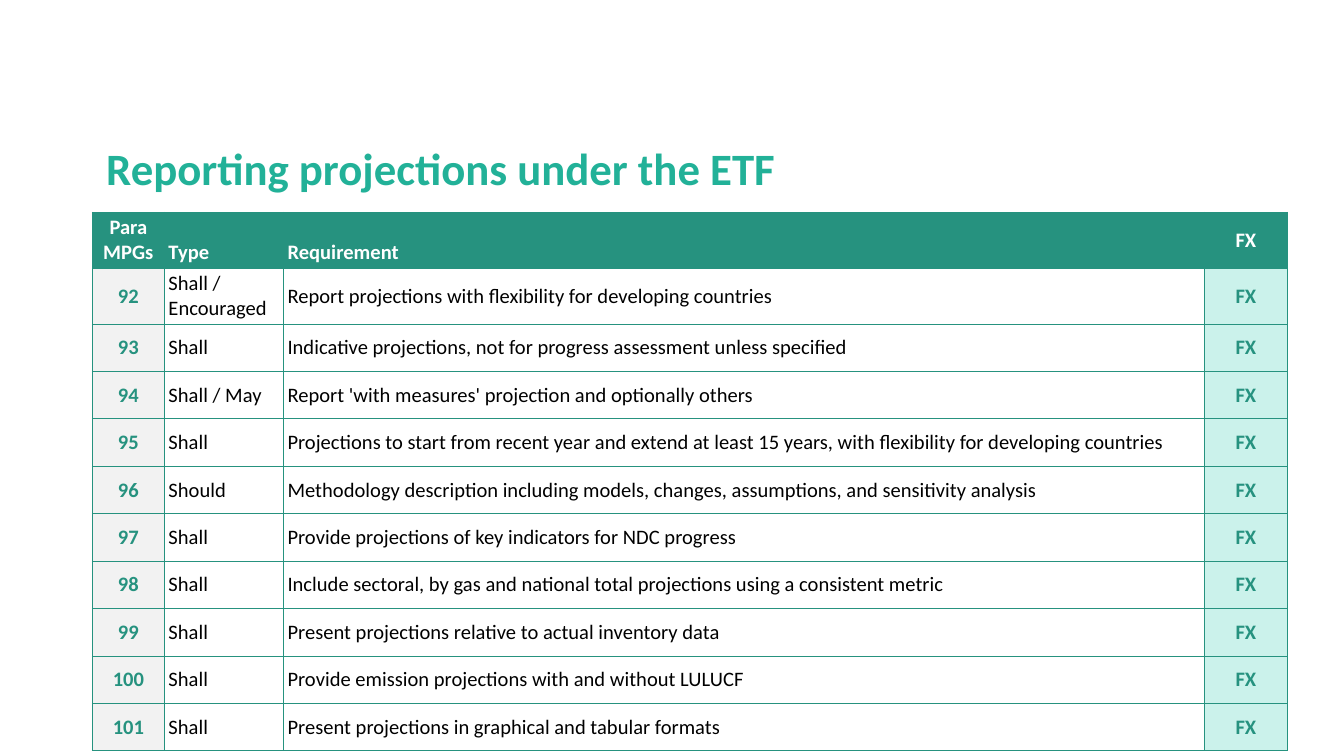
from lxml.etree import SubElement
from pptx import Presentation
from pptx.dml.color import RGBColor
from pptx.enum.text import MSO_ANCHOR, PP_ALIGN
from pptx.oxml.ns import qn
from pptx.util import Pt

TITLE_GREEN = "22B198"
GREEN = "26927F"
MINT = "CBF2EB"
GREY = "F2F2F2"
WHITE = "FFFFFF"
BLACK = "000000"

HEADINGS = ["Para MPGs", "Type", "Requirement", "FX"]
REQUIREMENTS = [
    ("Shall / Encouraged", "Report projections with flexibility for developing countries"),
    ("Shall", "Indicative projections, not for progress assessment unless specified"),
    ("Shall / May", "Report 'with measures' projection and optionally others"),
    ("Shall", "Projections to start from recent year and extend at least 15 years, "
              "with flexibility for developing countries"),
    ("Should", "Methodology description including models, changes, assumptions, "
               "and sensitivity analysis"),
    ("Shall", "Provide projections of key indicators for NDC progress"),
    ("Shall", "Include sectoral, by gas and national total projections using a consistent metric"),
    ("Shall", "Present projections relative to actual inventory data"),
    ("Shall", "Provide emission projections with and without LULUCF"),
    ("Shall", "Present projections in graphical and tabular formats"),
]
FIRST_PARAGRAPH = 92
COLUMN_WIDTHS = [38.6, 63.8, 493.4, 44.5]
HEADER_HEIGHT, ROW_HEIGHT = 29, 25.4


def rgb(color):
    return RGBColor.from_string(color)


class SlideBuilder:
    """Holds the type style and the slide being filled."""

    font = "Calibri"
    table_size = 11

    def __init__(self, slide):
        self.slide = slide

    def format_runs(self, paragraph, size, color, bold):
        for run in paragraph.runs:
            run.font.name = self.font
            run.font.size = Pt(size)
            run.font.bold = bold
            run.font.color.rgb = rgb(color)

    def title(self, text, left, top, width, height):
        title = self.slide.shapes.title
        title.left, title.top = Pt(left), Pt(top)
        title.width, title.height = Pt(width), Pt(height)
        frame = title.text_frame
        frame.text = text
        frame.vertical_anchor = MSO_ANCHOR.MIDDLE
        heading = frame.paragraphs[0]
        heading.alignment = PP_ALIGN.LEFT
        heading.line_spacing = 0.9
        self.format_runs(heading, 24, TITLE_GREEN, True)

    def table(self, left, top, widths, heights):
        frame = self.slide.shapes.add_table(
            len(heights), len(widths), Pt(left), Pt(top), Pt(sum(widths)), Pt(sum(heights)))
        table = frame.table
        for column, width in zip(table.columns, widths):
            column.width = Pt(width)
        for row, height in zip(table.rows, heights):
            row.height = Pt(height)
        return table

    def cell(self, cell, text, fill, color, bold=True, centered=False,
             anchor=MSO_ANCHOR.MIDDLE, margins=(2.2, 1.4)):
        self.borders(cell)
        cell.fill.solid()
        cell.fill.fore_color.rgb = rgb(fill)
        cell.margin_left = cell.margin_right = Pt(margins[0])
        cell.margin_top = cell.margin_bottom = Pt(margins[1])
        cell.vertical_anchor = anchor
        cell.text_frame.text = text
        paragraph = cell.text_frame.paragraphs[0]
        paragraph.alignment = PP_ALIGN.CENTER if centered else PP_ALIGN.LEFT
        self.format_runs(paragraph, self.table_size, color, bold)

    def borders(self, cell):
        properties = cell._tc.get_or_add_tcPr()
        for side in ("a:lnL", "a:lnR", "a:lnT", "a:lnB"):
            line = SubElement(properties, qn(side), w=str(Pt(0.5)))
            line_fill = SubElement(line, qn("a:solidFill"))
            SubElement(line_fill, qn("a:srgbClr"), val=GREEN)


def main():
    presentation = Presentation()
    presentation.slide_width, presentation.slide_height = Pt(720), Pt(405)
    builder = SlideBuilder(presentation.slides.add_slide(presentation.slide_layouts[5]))
    builder.title("Reporting projections under the ETF", 49.7, 74.2, 620.6, 35.3)

    heights = [HEADER_HEIGHT] + [ROW_HEIGHT] * len(REQUIREMENTS)
    table = builder.table(49.5, 113.7, COLUMN_WIDTHS, heights)
    for column, heading in enumerate(HEADINGS):
        is_flexibility = heading == "FX"
        builder.cell(table.cell(0, column), heading, GREEN, WHITE,
                     centered=column == 0 or is_flexibility,
                     anchor=MSO_ANCHOR.MIDDLE if is_flexibility else MSO_ANCHOR.BOTTOM)
    for row, (obligation, requirement) in enumerate(REQUIREMENTS, start=1):
        number = str(FIRST_PARAGRAPH + row - 1)
        builder.cell(table.cell(row, 0), number, GREY, GREEN, centered=True)
        builder.cell(table.cell(row, 1), obligation, WHITE, BLACK, bold=False)
        builder.cell(table.cell(row, 2), requirement, WHITE, BLACK, bold=False)
        builder.cell(table.cell(row, 3), "FX", MINT, GREEN, centered=True, margins=(0.7, 0.4))

    presentation.save("out.pptx")


if __name__ == "__main__":
    main()
